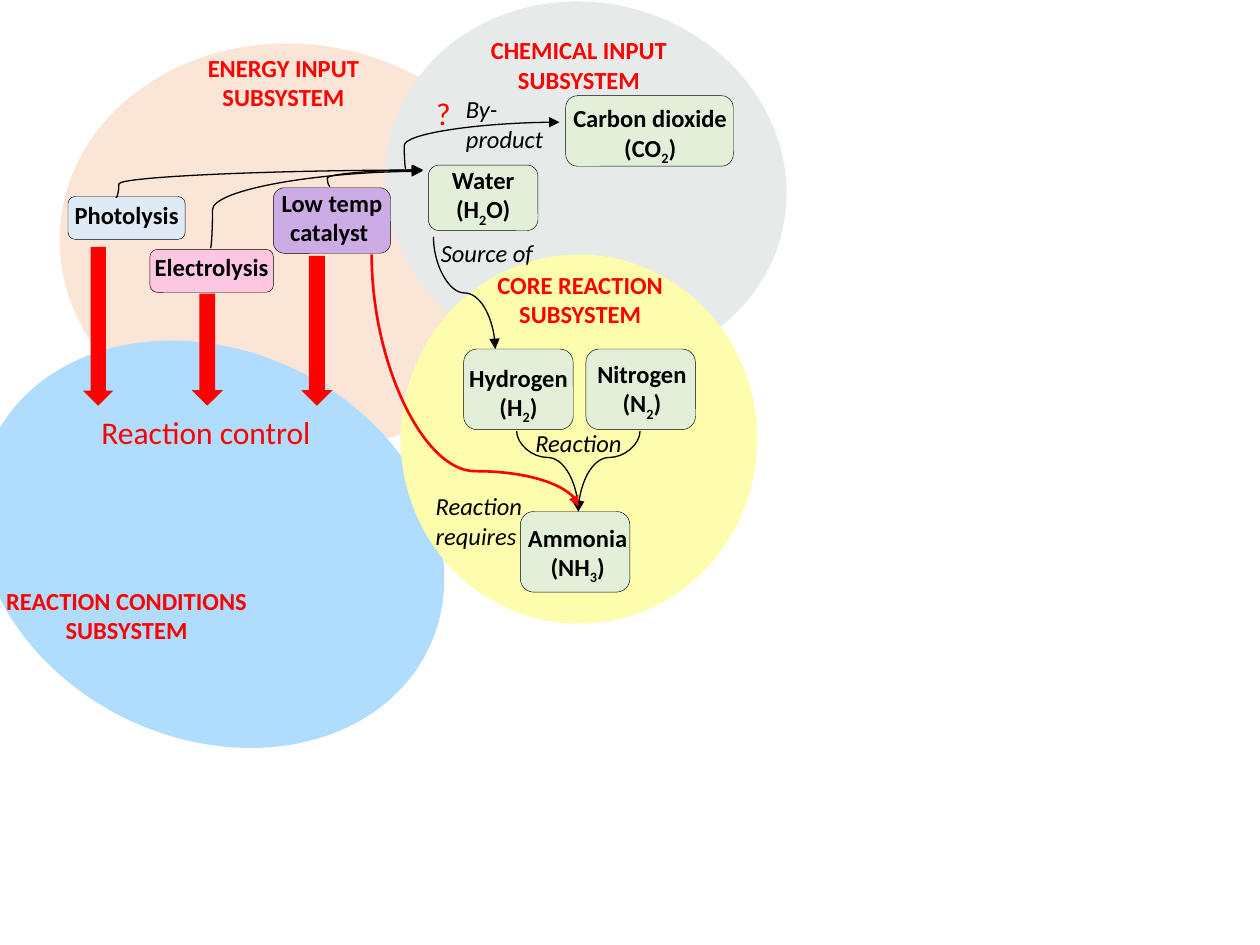
from dataclasses import dataclass
from itertools import groupby

from lxml.etree import SubElement
from pptx import Presentation
from pptx.dml.color import RGBColor
from pptx.enum.shapes import MSO_CONNECTOR, MSO_SHAPE
from pptx.enum.text import MSO_AUTO_SIZE, PP_ALIGN
from pptx.oxml.ns import qn
from pptx.util import Inches, Pt


@dataclass(frozen=True)
class Theme:
    font: str = "Calibri"
    small: int = 14
    large: int = 18
    ink: str = "000000"
    accent: str = "FF0000"
    energy: str = "FBE5D6"
    chemical: str = "E6EAE9"
    conditions: str = "B0DDFE"
    core: str = "FDFDAD"
    substance: str = "E2F0D9"
    catalyst: str = "CDACE6"
    electrolysis: str = "FDC7E2"
    photolysis: str = "DEEBF7"
    outline: float = 0.25
    thin: float = 0.75
    thick: float = 1.5


THEME = Theme()
COLUMNS, ROWS = 100, 75
SLIDE_WIDTH, SLIDE_HEIGHT = Inches(10), Inches(7.5)

# All places are in grid columns and rows: left, top, width, height.
SUBSYSTEM_AREAS = [
    ((4.7, 3.5, 37.6, 32.3), 7.1, THEME.energy),
    ((30.5, 0.2, 32, 29), 13.1, THEME.chemical),
    ((-2.4, 27.8, 38.3, 30.8), 25.6, THEME.conditions),
    ((31.8, 20.2, 28.3, 29.3), 0, THEME.core),
]
HEADINGS = [
    ("REACTION CONDITIONS \nSUBSYSTEM", (0.4, 46.5, 19.3, 4.7)),
    ("CHEMICAL INPUT\nSUBSYSTEM", (35.5, 2.8, 20.9, 4.7)),
    ("ENERGY INPUT\nSUBSYSTEM", (13.7, 4.2, 17.6, 4.7)),
    ("CORE REACTION\nSUBSYSTEM", (35.6, 21.4, 20.9, 4.7)),
]
# Each node has a box, its fill and a label place; digits become subscripts.
NODE_GROUPS = [
    [
        ("Hydrogen\n(H2)", (36.8, 27.7, 8.7, 6.4), THEME.substance, (36.8, 28.8, 8.7, 4.7)),
        ("Nitrogen\n(N2)", (46.5, 27.7, 8.7, 6.4), THEME.substance, (46.7, 28.5, 8.5, 4.7)),
        ("Ammonia\n(NH3)", (41.3, 40.6, 8.7, 6.4), THEME.substance, (41.5, 41.5, 8.7, 4.7)),
    ],
    [("Water\n(H2O)", (34, 13.1, 8.7, 5.2), THEME.substance, (34, 13.1, 8.7, 4.7))],
    [
        ("Low temp\ncatalyst ", (21.7, 14.9, 9.3, 5.2), THEME.catalyst, (21.7, 14.9, 9.3, 4.7)),
        ("Electrolysis", (11.9, 19.8, 9.8, 3.4), THEME.electrolysis, (11.9, 20, 9.8, 2.4)),
        ("Photolysis", (5.4, 15.6, 9.3, 3.4), THEME.photolysis, (5.4, 15.9, 9.3, 2.4)),
    ],
    [("Carbon dioxide\n(CO2)", (44.9, 7.6, 13.3, 5.6), THEME.substance, (45.2, 8.2, 12.8, 4.7))],
]
RELATIONS = [
    ("Reaction", (41.5, 33.5, 9.1, 3.4)),
    ("Reaction requires", (33.6, 38.5, 10.3, 5.7)),
    ("Source of", (34, 18.4, 10.3, 3.4)),
    ("By-\nproduct", (36, 7, 8.3, 5.7)),
]
REMARKS = [
    ("Reaction control", (5.9, 32.3, 20.9, 4)),
    ("?", (33.6, 7, 3.2, 4)),
]
# Block arrows: centre column, top row, thickness.
CONTROL_ARROWS = [(7.8, 19.6, 2.4), (16.45, 23.3, 2.5), (25.15, 20.3, 2.5)]
CONTROL_BOTTOM = 32.2
# Curves: start, end, bend as a share of the length.
RISING_CURVES = [
    ((26.2, 14.8), (33.6, 13.5), -0.03),
    ((9.2, 15.7), (33.5, 13.5), 0.01),
    ((16.7, 19.7), (33.5, 13.6), 0.01),
    ((32.2, 13.4), (44.4, 9.7), -0.01),
]
FALLING_CURVES = [
    ((50.8, 34.2), (45.9, 40.6), 0.33, THEME.ink, THEME.thin),
    ((41, 34.2), (45.9, 40.6), 0.33, THEME.ink, THEME.thin),
    ((34.4, 18.8), (39.3, 27.7), 0.5, THEME.ink, THEME.thin),
    ((29.5, 20.2), (45.9, 40.2), 0.86, THEME.accent, THEME.thick),
]

HEADING_FONT = {"size": Pt(THEME.small), "bold": True, "color": THEME.accent}
NODE_FONT = {"size": Pt(THEME.small), "bold": True, "color": THEME.ink}
RELATION_FONT = {"size": Pt(THEME.small), "italic": True, "color": THEME.ink}
REMARK_FONT = {"size": Pt(THEME.large), "color": THEME.accent}
NO_MARGINS = dict.fromkeys(("margin_left", "margin_top", "margin_right", "margin_bottom"), 0)


def grid(*cells):
    """Turn alternating columns and rows into slide lengths."""
    units = (SLIDE_WIDTH / COLUMNS, SLIDE_HEIGHT / ROWS)
    return [round(cell * units[index % 2]) for index, cell in enumerate(cells)]


def set_attributes(target, values):
    for name, value in values.items():
        if name == "color":
            target.color.rgb = RGBColor.from_string(value)
        else:
            setattr(target, name, value)


def add_filled_shape(shapes, kind, place, fill, rotation=0, outlined=False):
    shape = shapes.add_shape(kind, *grid(*place))
    shape.shadow.inherit = False
    shape.rotation = rotation
    shape.fill.solid()
    shape.fill.fore_color.rgb = RGBColor.from_string(fill)
    if outlined:
        set_attributes(shape.line, {"color": THEME.ink, "width": Pt(THEME.outline)})
    else:
        shape.line.fill.background()


def add_text(shapes, text, place, font, alignment=PP_ALIGN.CENTER, margins=None, subscripts=False):
    frame = shapes.add_textbox(*grid(*place)).text_frame
    set_attributes(frame, {"word_wrap": True, "auto_size": MSO_AUTO_SIZE.SHAPE_TO_FIT_TEXT,
                           **(margins or {})})
    for index, line in enumerate(text.split("\n")):
        paragraph = frame.add_paragraph() if index else frame.paragraphs[0]
        paragraph.alignment = alignment
        for is_digit, characters in groupby(line, str.isdigit):
            run = paragraph.add_run()
            run.text = "".join(characters)
            set_attributes(run.font, {"name": THEME.font, **font})
            if is_digit and subscripts:
                run._r.get_or_add_rPr().set("baseline", "-25000")


def add_curve(shapes, start, end, bend, color=THEME.ink, width=THEME.thin, falling=False):
    """Draw a curved arrow; a falling one leaves and arrives vertically."""
    if falling:
        across, down = end[0] - start[0], end[1] - start[1]
        middle_x, middle_y = (start[0] + end[0]) / 2, (start[1] + end[1]) / 2
        left, right = middle_x - down / 2, middle_x + down / 2
        top, bottom = middle_y - abs(across) / 2, middle_y + abs(across) / 2
        start, end = ((right, top), (left, bottom)) if across > 0 else ((left, top), (right, bottom))
    connector = shapes.add_connector(MSO_CONNECTOR.CURVE, *grid(*start, *end))
    set_attributes(connector.line, {"color": color, "width": Pt(width)})
    properties = connector._element.spPr
    if falling:
        properties.find(qn("a:xfrm")).set("rot", "16200000" if across > 0 else "5400000")
    adjustments = properties.find(qn("a:prstGeom")).find(qn("a:avLst"))
    SubElement(adjustments, qn("a:gd"), name="adj1", fmla=f"val {round(bend * 100000)}")
    SubElement(properties.find(qn("a:ln")), qn("a:tailEnd"), type="triangle")
    SubElement(properties, qn("a:effectLst"))


def main():
    presentation = Presentation()
    presentation.slide_width, presentation.slide_height = SLIDE_WIDTH, SLIDE_HEIGHT
    shapes = presentation.slides.add_slide(presentation.slide_layouts[6]).shapes

    for place, rotation, fill in SUBSYSTEM_AREAS:
        add_filled_shape(shapes, MSO_SHAPE.OVAL, place, fill, rotation)
    for text, place in HEADINGS:
        add_text(shapes, text, place, HEADING_FONT, margins=NO_MARGINS)
    for nodes in NODE_GROUPS:
        group_shapes = shapes.add_group_shape().shapes
        for text, box, fill, label in nodes:
            add_filled_shape(group_shapes, MSO_SHAPE.ROUNDED_RECTANGLE, box, fill, outlined=True)
            add_text(group_shapes, text, label, NODE_FONT, margins=NO_MARGINS, subscripts=True)
    for text, place in RELATIONS:
        add_text(shapes, text, place, RELATION_FONT, PP_ALIGN.LEFT)
    for text, place in REMARKS:
        add_text(shapes, text, place, REMARK_FONT)
    for center, top, thickness in CONTROL_ARROWS:
        length = CONTROL_BOTTOM - top
        place = (center - length / 2, (top + CONTROL_BOTTOM - thickness) / 2, length, thickness)
        add_filled_shape(shapes, MSO_SHAPE.LEFT_ARROW, place, THEME.accent, rotation=270)
    for curve in RISING_CURVES:
        add_curve(shapes, *curve)
    for curve in FALLING_CURVES:
        add_curve(shapes, *curve, falling=True)

    presentation.save("out.pptx")


if __name__ == "__main__":
    main()
